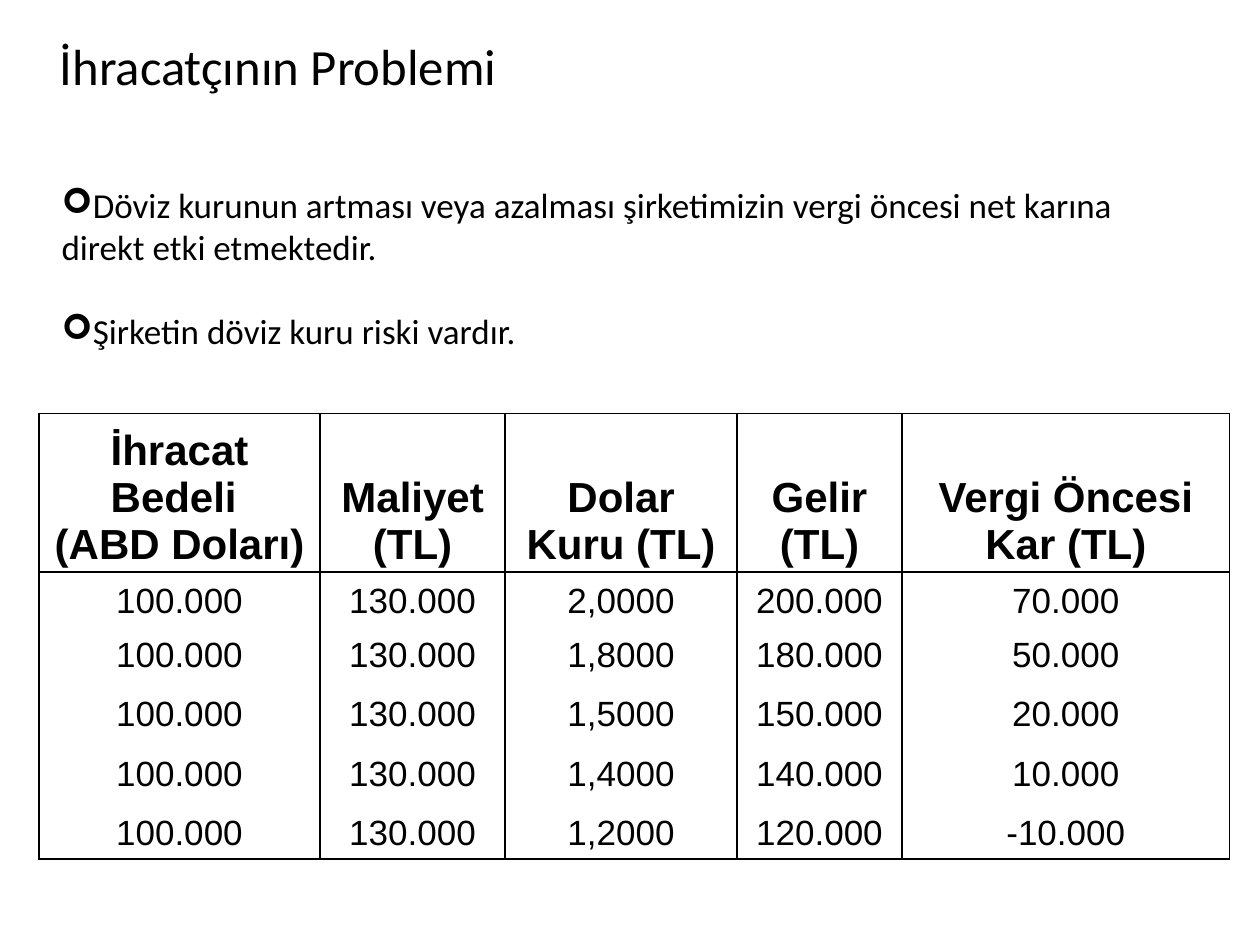
from lxml.etree import SubElement
from pptx import Presentation
from pptx.dml.color import RGBColor
from pptx.enum.text import MSO_ANCHOR, PP_ALIGN
from pptx.oxml import parse_xml
from pptx.oxml.ns import nsdecls, qn
from pptx.util import Inches, Pt

COLORS = {"text": "000000", "border": "000000"}
COLUMN_WIDTHS = [2.23, 1.47, 1.84, 1.31, 2.6]
ROW_HEIGHTS = [1.2, 0.42, 0.42, 0.47, 0.47, 0.47]
HEADERS = [
    ["İhracat Bedeli ", "(ABD Doları)"],
    ["Maliyet (TL)"],
    ["Dolar Kuru (TL)"],
    ["Gelir (TL)"],
    ["Vergi Öncesi Kar (TL)"],
]
RATES = [
    ("2,0000", "200.000", "70.000"),
    ("1,8000", "180.000", "50.000"),
    ("1,5000", "150.000", "20.000"),
    ("1,4000", "140.000", "10.000"),
    ("1,2000", "120.000", "-10.000"),
]
POINTS = [
    "Döviz kurunun artması veya azalması şirketimizin vergi öncesi net karına direkt etki etmektedir.",
    "Şirketin döviz kuru riski vardır.",
]


def write_text(frame, lines, *, size, font="Calibri", bold=False,
               align=PP_ALIGN.LEFT, bullet=None, gap=0):
    """Write each line as a formatted paragraph of the text frame."""
    for index, line in enumerate(lines):
        paragraph = frame.add_paragraph() if index else frame.paragraphs[0]
        if bullet:
            properties = paragraph._p.get_or_add_pPr()
            SubElement(properties, qn("a:buFont"), typeface="Wingdings")
            SubElement(properties, qn("a:buChar"), char=bullet)
        paragraph.alignment = align
        paragraph.space_before = Pt(gap if index else 0)
        run = paragraph.add_run()
        run.text = line
        run.font.size = Pt(size)
        run.font.name = font
        run.font.bold = bold
        run.font.color.rgb = RGBColor.from_string(COLORS["text"])


def add_text(slide, left, top, width, height, lines, **text_format):
    """Add a wrapping text box."""
    box = slide.shapes.add_textbox(
        Inches(left), Inches(top), Inches(width), Inches(height))
    box.text_frame.word_wrap = True
    write_text(box.text_frame, lines, **text_format)


def set_borders(cell, sides):
    """Draw thin lines on the given sides of a cell and none on the others."""
    properties = cell._tc.get_or_add_tcPr()
    for index, side in enumerate("LRTB"):
        fill = (f'<a:solidFill><a:srgbClr val="{COLORS["border"]}"/></a:solidFill>'
                if side in sides else "<a:noFill/>")
        properties.insert(index, parse_xml(
            f'<a:ln{side} {nsdecls("a")} w="{Pt(1)}">{fill}</a:ln{side}>'))


def add_profit_table(slide):
    """Add the table of profit at each exchange rate."""
    rows = [HEADERS] + [
        [[value] for value in ("100.000", "130.000", *rate)] for rate in RATES]
    table = slide.shapes.add_table(
        len(rows), len(HEADERS), Inches(0.31), Inches(3.28),
        Inches(sum(COLUMN_WIDTHS)), Inches(sum(ROW_HEIGHTS))).table
    table.first_row = True
    table.horz_banding = False
    for column, width in zip(table.columns, COLUMN_WIDTHS):
        column.width = Inches(width)
    for row_index, (row, height) in enumerate(zip(rows, ROW_HEIGHTS)):
        table.rows[row_index].height = Inches(height)
        is_header = row_index == 0
        sides = "LR"
        if row_index <= 1:
            sides += "T"
        if is_header or row_index == len(rows) - 1:
            sides += "B"
        for column_index, lines in enumerate(row):
            cell = table.cell(row_index, column_index)
            cell.vertical_anchor = MSO_ANCHOR.BOTTOM
            cell.margin_top = cell.margin_bottom = Inches(0.03 if is_header else 0.05)
            cell.fill.background()
            set_borders(cell, sides)
            write_text(cell.text_frame, lines, size=24 if is_header else 20,
                       font="Arial", bold=is_header, align=PP_ALIGN.CENTER)


def main():
    """Build and save the slide."""
    presentation = Presentation()
    presentation.slide_width = Inches(10)
    presentation.slide_height = Inches(7.5)
    slide = presentation.slides.add_slide(presentation.slide_layouts[6])
    add_text(slide, -1.41, 0.23, 7.24, 0.86, ["İhracatçının Problemi"],
             size=29, align=PP_ALIGN.CENTER)
    add_profit_table(slide)
    add_text(slide, 0.39, 1.41, 8.82, 1.93, POINTS, size=20, bullet="➢", gap=24)
    presentation.save("out.pptx")


if __name__ == "__main__":
    main()
